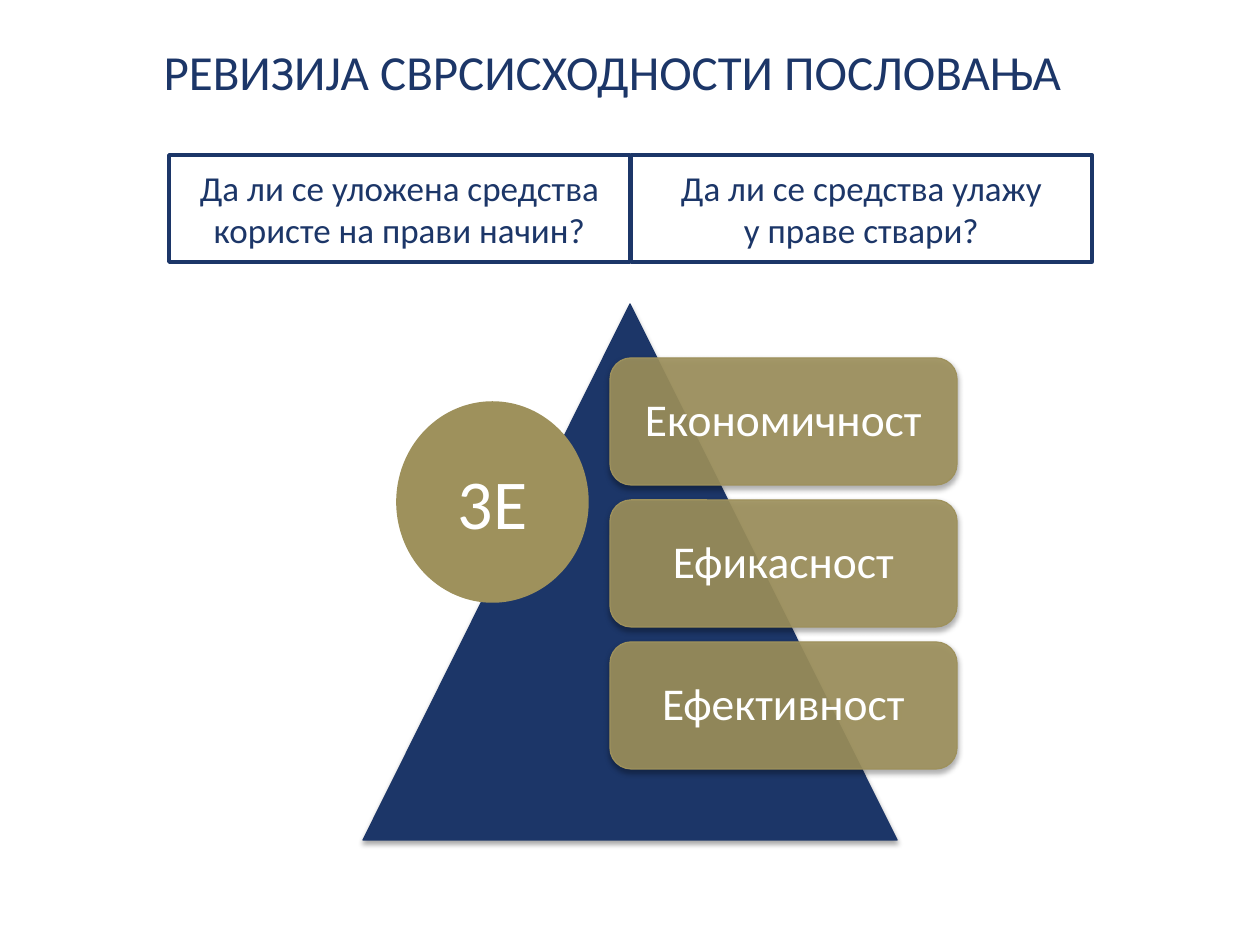
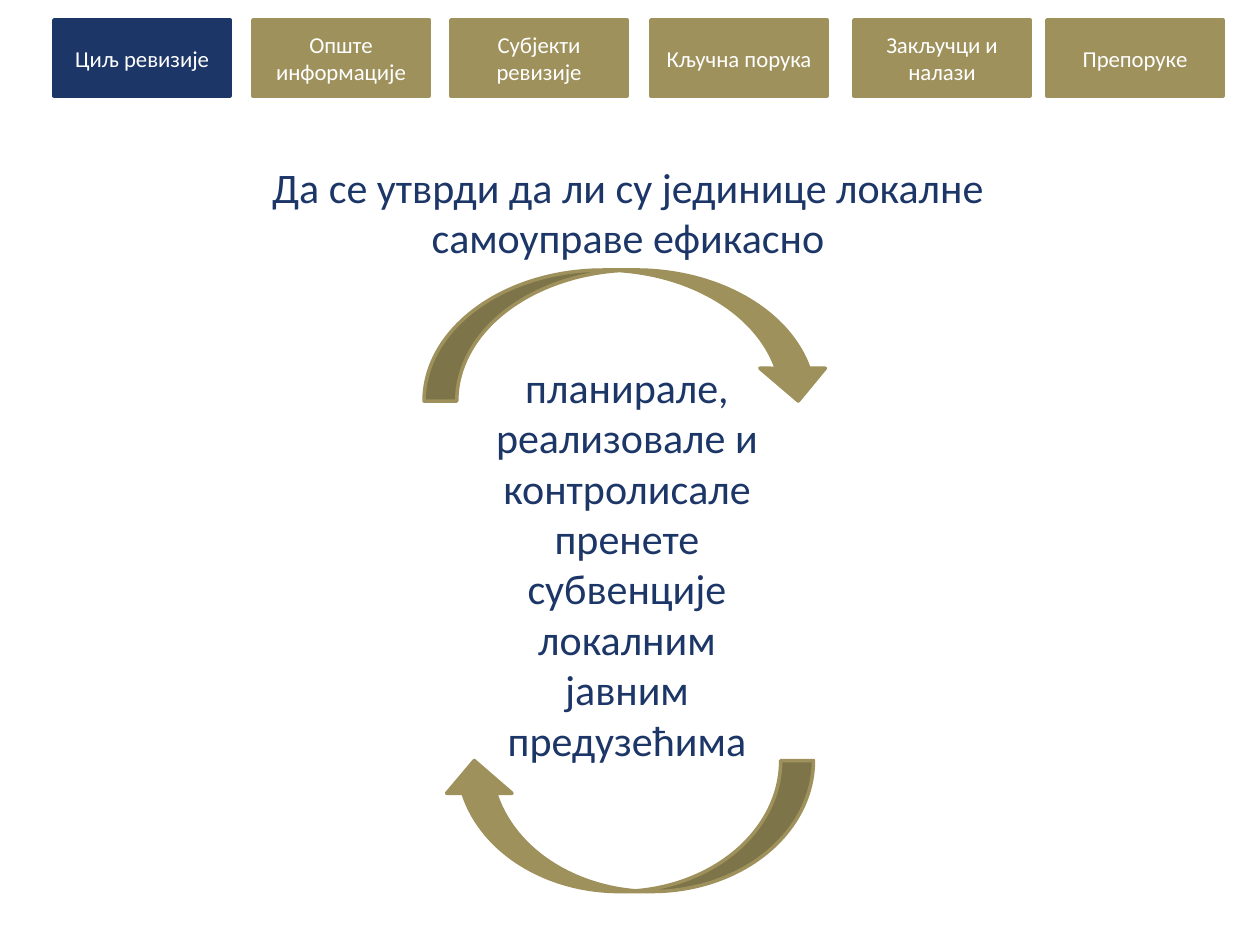
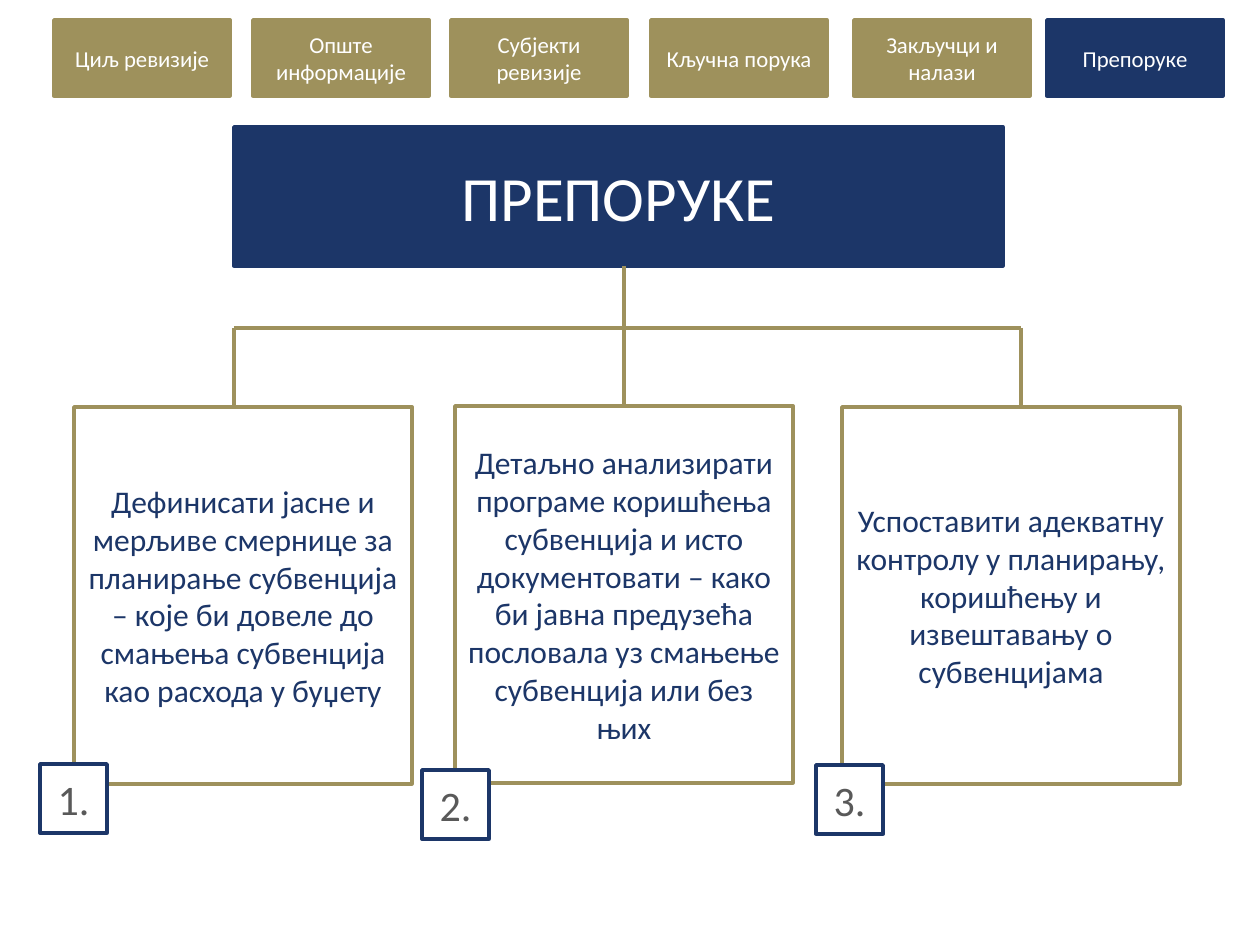
import pptx
import pptx.dml.color
import pptx.enum.shapes
import pptx.enum.text
import pptx.oxml
import pptx.oxml.ns
import pptx.util

PX_PER_INCH = 126
NAVY, GOLD, WHITE, GREY = "1C3668", "9E915C", "FFFFFF", "595959"
FONT = "Calibri"
SHAPE = pptx.enum.shapes.MSO_SHAPE
MIDDLE = pptx.enum.text.MSO_ANCHOR.MIDDLE
TOP = pptx.enum.text.MSO_ANCHOR.TOP
CENTER = pptx.enum.text.PP_ALIGN.CENTER
SECTIONS = [
    (54, "Циљ ревизије"),
    (253, "Опште информације"),
    (451, "Субјекти ревизије"),
    (651, "Кључна порука"),
    (854, "Закључци и налази"),
    (1047, "Препоруке"),
]
RECOMMENDATIONS = [
    ((74, 407), (40, 764),
     "Дефинисати јасне и мерљиве смернице за планирање субвенција – "
     "које би довеле до смањења субвенција као расхода у буџету"),
    ((455, 406), (422, 770),
     "Детаљно анализирати програме коришћења субвенција и исто "
     "документовати – како би јавна предузећа пословала уз смањење "
     "субвенција или без њих"),
    ((842, 407), (816, 765),
     "Успоставити адекватну контролу у планирању, коришћењу и "
     "извештавању о субвенцијама"),
]


def px(*lengths):
    """Turn pixel lengths into a list of EMU lengths."""
    return [pptx.util.Emu(round(length * 914400 / PX_PER_INCH)) for length in lengths]


def rgb(value):
    """Turn a hex string into a colour."""
    return pptx.dml.color.RGBColor.from_string(value)


def apply(target, values):
    """Set each attribute of the target from a dict."""
    for name, value in values.items():
        setattr(target, name, value)


def write_text(shape, text, size, color, anchor=MIDDLE, spacing=1.0):
    """Write centred paragraphs, one per line of text."""
    frame = shape.text_frame
    apply(frame, {"text": text, "word_wrap": True, "vertical_anchor": anchor})
    for paragraph in frame.paragraphs:
        apply(paragraph, {"alignment": CENTER, "line_spacing": spacing})
        apply(paragraph.font, {"name": FONT, "size": pptx.util.Pt(size), "bold": False})
        paragraph.font.color.rgb = rgb(color)


def add_block(slide, kind, box, fill, line, width=2):
    """Add a preset shape with a solid fill and an outline."""
    shape = slide.shapes.add_shape(kind, *px(*box))
    shape.shadow.inherit = False
    shape.fill.solid()
    shape.fill.fore_color.rgb = rgb(fill)
    shape.line.color.rgb = rgb(line)
    shape.line.width = pptx.util.Pt(width)
    return shape


def add_label(slide, box, text, size, color, fill, line):
    """Add a rectangle that holds text."""
    shape = add_block(slide, SHAPE.RECTANGLE, box, fill, line)
    write_text(shape, text, size, color)
    return shape


def add_statement(slide, box, text):
    """Add a large free-standing text."""
    write_text(slide.shapes.add_textbox(*px(*box)), text, 24, NAVY, TOP)


def add_shadow(shape):
    """Give the shape a soft shadow below it."""
    effects = shape.element.spPr.find(pptx.oxml.ns.qn("a:effectLst"))
    effects.append(pptx.oxml.parse_xml(
        f'<a:outerShdw {pptx.oxml.ns.nsdecls("a")} blurRad="39370" dist="22860" '
        'dir="5400000" rotWithShape="0"><a:srgbClr val="000000">'
        '<a:alpha val="35000"/></a:srgbClr></a:outerShdw>'))


def set_opacity(shape, percent):
    """Make the solid fill of the shape partly transparent."""
    color = shape.element.spPr.find(pptx.oxml.ns.qn("a:solidFill"))[0]
    color.append(pptx.oxml.parse_xml(
        f'<a:alpha {pptx.oxml.ns.nsdecls("a")} val="{percent * 1000}"/>'))


def add_curved_arrow(slide, box, rotation):
    """Add a mirrored curved arrow turned by the rotation."""
    arrow = add_block(slide, SHAPE.CURVED_RIGHT_ARROW, box, GOLD, GOLD)
    arrow.rotation = rotation
    arrow.element.spPr.find(pptx.oxml.ns.qn("a:xfrm")).set("flipH", "1")


def add_line(slide, start, end):
    """Add a straight gold connector."""
    connector = slide.shapes.add_connector(
        pptx.enum.shapes.MSO_CONNECTOR.STRAIGHT, *px(*start, *end))
    connector.line.color.rgb = rgb(GOLD)
    connector.line.width = pptx.util.Pt(2.25)
    connector.element.spPr.append(
        pptx.oxml.parse_xml(f'<a:effectLst {pptx.oxml.ns.nsdecls("a")}/>'))
    return connector


def add_navigation(slide, current):
    """Add the row of section tabs with the current one in navy."""
    for left, name in SECTIONS:
        color = NAVY if name == current else GOLD
        add_label(slide, (left, 20, 176, 76), name, 13, WHITE, color, color)


def add_slide(presentation, layout):
    """Add a white slide with the numbered layout."""
    slide = presentation.slides.add_slide(presentation.slide_layouts[layout])
    slide.background.fill.solid()
    slide.background.fill.fore_color.rgb = rgb(WHITE)
    return slide


def build_overview(presentation):
    """Build the slide on the three principles of the audit."""
    slide = add_slide(presentation, 5)
    title = slide.shapes.title
    apply(title, dict(zip(("left", "top", "width", "height"), px(35, 26, 1154, 89))))
    write_text(title, "РЕВИЗИЈА СВРСИСХОДНОСТИ ПОСЛОВАЊА", 28, NAVY)
    questions = [
        (631, "Да ли се средства улажу\nу праве ствари?"),
        (169, "Да ли се уложена средства користе на прави начин?"),
    ]
    for left, question in questions:
        add_label(slide, (left, 155, 461, 107), question, 20, NAVY, WHITE, NAVY)
    add_shadow(add_block(slide, SHAPE.ISOSCELES_TRIANGLE, (363, 304, 534, 536),
                         NAVY, NAVY, 0.75))
    for row, principle in enumerate(("Економичност", "Ефикасност", "Ефективност")):
        card = add_block(slide, SHAPE.ROUNDED_RECTANGLE,
                         (610, 358 + 142 * row, 347, 127), GOLD, GOLD, 0.75)
        set_opacity(card, 90)
        add_shadow(card)
        write_text(card, principle, 26, WHITE, spacing=0.9)
    circle = add_block(slide, SHAPE.OVAL, (398, 403, 189, 198), GOLD, GOLD)
    write_text(circle, "3Е", 40, WHITE)


def build_goal(presentation):
    """Build the slide on the goal of the audit."""
    slide = add_slide(presentation, 6)
    add_navigation(slide, "Циљ ревизије")
    add_statement(slide, (467, 355, 320, 420),
                  "планирале, реализовале и контролисале пренете субвенције "
                  "локалним јавним предузећима")
    add_curved_arrow(slide, (562, 132, 131, 407), 270)
    add_curved_arrow(slide, (562, 640, 131, 372), 90)
    add_statement(slide, (243, 155, 770, 115),
                  "Да се утврди да ли су јединице локалне самоуправе ефикасно")


def build_recommendations(presentation):
    """Build the tree of recommendations."""
    slide = add_slide(presentation, 6)
    add_label(slide, (234, 127, 769, 139), "ПРЕПОРУКЕ", 36, WHITE, NAVY, NAVY)
    cards = [add_label(slide, (*corner, 338, 377), text, 18, NAVY, WHITE, GOLD)
             for corner, _, text in RECOMMENDATIONS]
    trunk = add_line(slide, (624, 266), (624, 406))
    trunk.end_connect(cards[1], 0)
    add_line(slide, (234, 328), (1021, 328))
    for branch in (234, 1021):
        add_line(slide, (branch, 328), (branch, 407))
    for number, (_, corner, _) in enumerate(RECOMMENDATIONS, 1):
        add_label(slide, (*corner, 67, 69), f"{number}.", 24, GREY, WHITE, NAVY)
    add_navigation(slide, "Препоруке")


def main():
    """Build the presentation and save it."""
    presentation = pptx.Presentation()
    presentation.slide_width, presentation.slide_height = px(1260, 945)
    build_overview(presentation)
    build_goal(presentation)
    build_recommendations(presentation)
    presentation.save("out.pptx")


if __name__ == "__main__":
    main()
